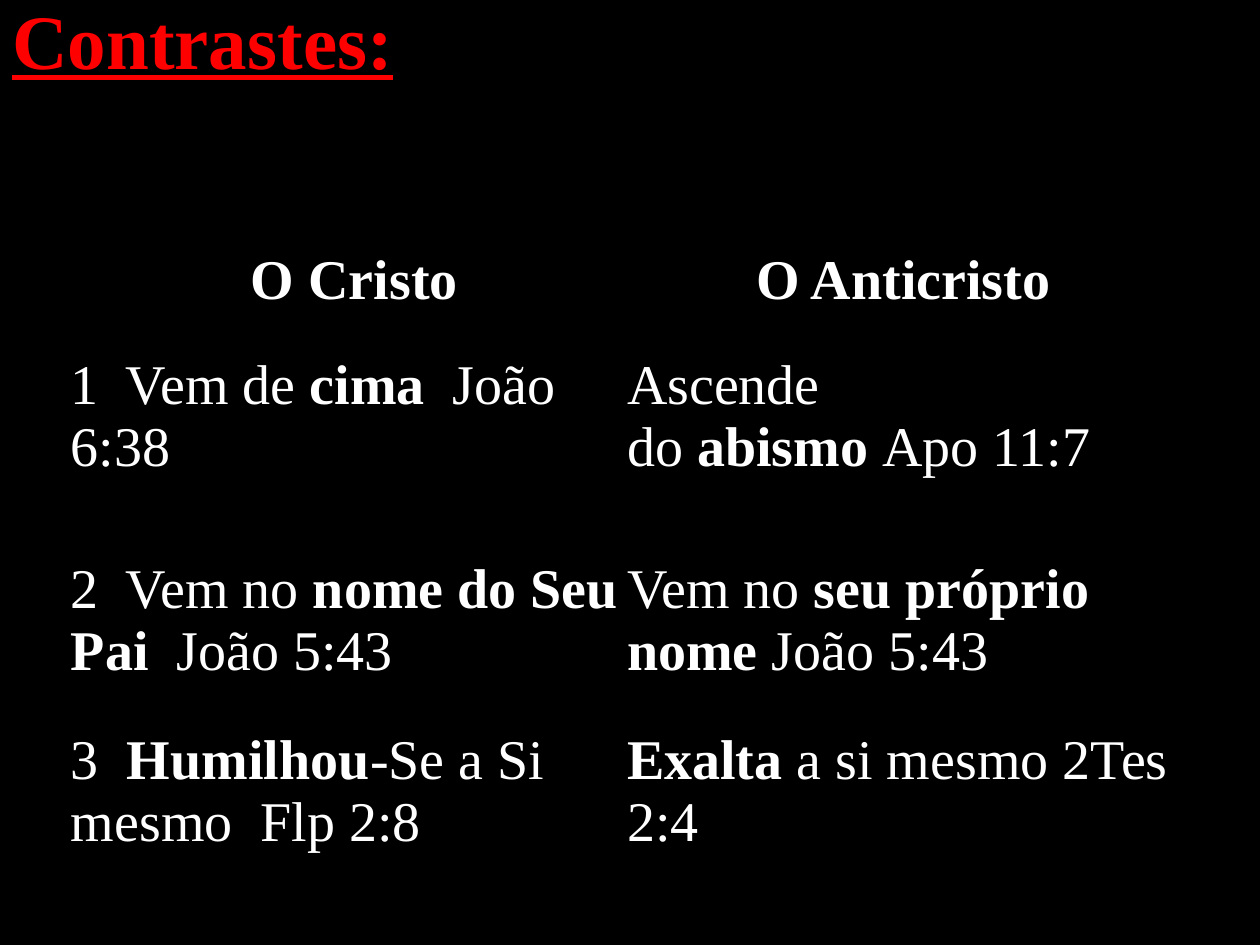
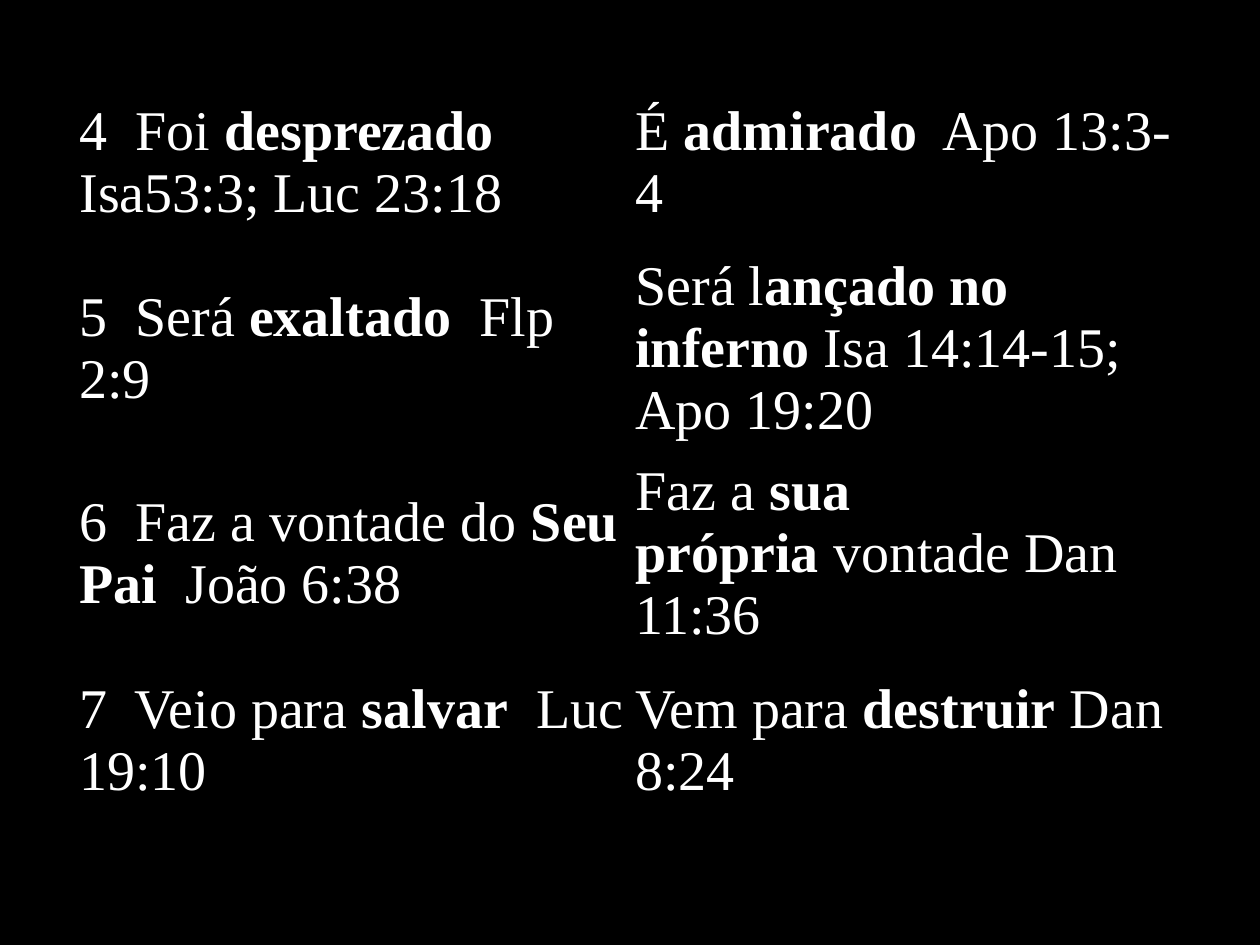
from pptx import Presentation
from pptx.dml.color import RGBColor
from pptx.enum.text import MSO_ANCHOR as Anchor, PP_ALIGN as Align
from pptx.oxml.ns import qn
from pptx.util import Cm, Pt

COLORS = {"background": "000000", "title": "FF0000", "text": "FFFFFF"}
FONT = "Times New Roman"
TITLE_FORMAT = {"name": FONT, "size": Pt(44), "bold": True, "underline": True}
CELL_FORMAT = {"name": FONT, "size": Pt(32)}
NO_GRID_STYLE = "{2D5ABB26-0587-4C30-8999-92F81FD0307C}"
COLUMN_WIDTH = Cm(11.21)
CELL_MARGIN = Cm(0.03)
HARD_SPACE = chr(160)

# In the cell texts, * switches bold on and off and ~ is a hard space.
HEADINGS = ("*~O Cristo*", "*O Anticristo*")
FIRST_CONTRASTS = [
    ("1~ Vem de~*cima*~ João 6:38", "Ascende do~*abismo*~Apo 11:7"),
    ("2~ Vem no~*nome do Seu Pai*~ João 5:43",
     "Vem no~*seu próprio nome*~João 5:43"),
    ("3~~*Humilhou*-Se a Si mesmo~ Flp 2:8", "*Exalta*~a si mesmo 2Tes 2:4"),
]
LAST_CONTRASTS = [
    ("4~ Foi~*desprezado*~ Isa53:3; Luc 23:18", "É~*admirado*~ Apo 13:3-4"),
    ("5~ Será~*exaltado*~ Flp 2:9",
     "Será l*ançado no inferno*~Isa 14:14-15; Apo 19:20"),
    ("6~ Faz a vontade do*~Seu Pai*~ João 6:38",
     "Faz a~*sua própria*~vontade Dan 11:36"),
    ("7~ Veio para~*salvar*~ Luc 19:10", "Vem para~*destruir*~Dan 8:24"),
]


def set_attributes(target, values):
    for name, value in values.items():
        setattr(target, name, value)


def add_run(paragraph, text, color, font_format):
    run = paragraph.add_run()
    run.text = text
    set_attributes(run.font, font_format)
    run.font.color.rgb = RGBColor.from_string(COLORS[color])


def add_black_slide(presentation):
    slide = presentation.slides.add_slide(presentation.slide_layouts[6])
    fill = slide.background.fill
    fill.solid()
    fill.fore_color.rgb = RGBColor.from_string(COLORS["background"])
    return slide


def add_title(slide, text):
    frame = slide.shapes.add_textbox(0, 0, Cm(25.4), Cm(1.27)).text_frame
    set_attributes(frame, {
        "word_wrap": True, "vertical_anchor": Anchor.MIDDLE,
        "margin_top": Cm(0.28), "margin_bottom": 0,
    })
    add_run(frame.paragraphs[0], text, "title", TITLE_FORMAT)


def fill_cell(cell, marked_text, alignment):
    """Write the text, in bold between each pair of asterisks."""
    set_attributes(cell, {
        "vertical_anchor": Anchor.MIDDLE,
        "margin_left": CELL_MARGIN, "margin_right": CELL_MARGIN,
        "margin_top": CELL_MARGIN, "margin_bottom": CELL_MARGIN,
    })
    cell.fill.background()
    paragraph = cell.text_frame.paragraphs[0]
    paragraph.alignment = alignment
    parts = marked_text.replace("~", HARD_SPACE).split("*")
    for index, part in enumerate(parts):
        if part:
            add_run(paragraph, part, "text",
                    {**CELL_FORMAT, "bold": index % 2 == 1})


def add_contrast_table(slide, left, top, row_heights, contrasts):
    frame = slide.shapes.add_table(len(contrasts), 2, left, top,
                                   2 * COLUMN_WIDTH, sum(row_heights))
    table = frame.table
    set_attributes(table, {"first_row": False, "horz_banding": False})
    next(frame.element.iter(qn("a:tableStyleId"))).text = NO_GRID_STYLE
    for column in table.columns:
        column.width = COLUMN_WIDTH
    for row, height, texts in zip(table.rows, row_heights, contrasts):
        row.height = height
        alignment = Align.CENTER if texts is HEADINGS else Align.LEFT
        for cell, text in zip(row.cells, texts):
            fill_cell(cell, text, alignment)


def main():
    presentation = Presentation()
    set_attributes(presentation,
                   {"slide_width": Cm(25.4), "slide_height": Cm(19.05)})

    slide = add_black_slide(presentation)
    add_contrast_table(slide, Cm(1.4), Cm(4.95),
                       [Cm(1.4), Cm(4.11), Cm(4.11), Cm(2.77)],
                       [HEADINGS, *FIRST_CONTRASTS])
    add_title(slide, "Contrastes:")

    slide = add_black_slide(presentation)
    add_contrast_table(slide, Cm(1.57), Cm(1.57),
                       [Cm(3.4), Cm(4.09), Cm(4.09), Cm(3.4)],
                       LAST_CONTRASTS)

    presentation.save("out.pptx")


if __name__ == "__main__":
    main()
